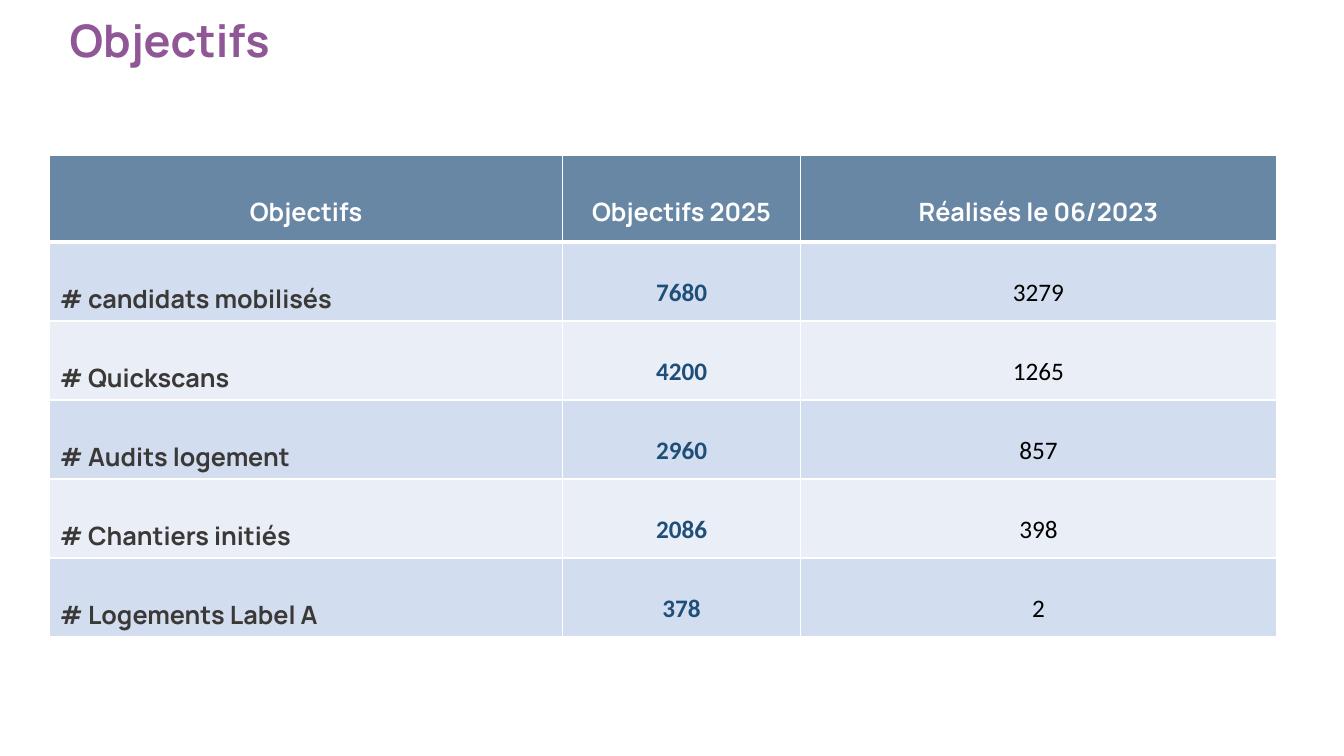
from lxml import etree
from pptx import Presentation
from pptx.dml.color import RGBColor
from pptx.enum.text import MSO_ANCHOR, MSO_AUTO_SIZE, PP_ALIGN
from pptx.oxml.ns import qn
from pptx.util import Pt

LEFT, CENTER = PP_ALIGN.LEFT, PP_ALIGN.CENTER
MIDDLE = MSO_ANCHOR.MIDDLE
NO_AUTOFIT = MSO_AUTO_SIZE.NONE

EMU_PER_PX = 9144  # 100 px to the inch
TITLE_ONLY_LAYOUT = 5

HEADERS = ["Objectifs", "Objectifs 2025", "Réalisés le 06/2023"]
GOALS = [
    ("# candidats mobilisés", 7680, 3279),
    ("# Quickscans", 4200, 1265),
    ("# Audits logement", 2960, 857),
    ("# Chantiers initiés", 2086, 398),
    ("# Logements Label A", 378, 2),
]
COLUMN_WIDTHS = [509, 236, 472]
HEADER_HEIGHT, ROW_HEIGHT = 86, 69


def px(length):
    return length * EMU_PER_PX


def color(hex_string):
    return RGBColor.from_string(hex_string)


class GoalSlide:
    heading_font = "Manrope"
    number_font = "Calibri"
    white = "FFFFFF"
    title_color = "8F5796"
    header_fill = "6787A4"
    band_fills = ["D2DEEF", "EAEFF7"]
    # font, colour, bold and alignment of each body column
    column_styles = [
        (heading_font, "3B3838", True, LEFT),
        (number_font, "1F4E79", True, CENTER),
        (number_font, "000000", False, CENTER),
    ]
    header_style = (heading_font, white, True, CENTER)

    def __init__(self, presentation):
        layout = presentation.slide_layouts[TITLE_ONLY_LAYOUT]
        self.slide = presentation.slides.add_slide(layout)

    def set_text(self, text_frame, text, size, style, line_spacing):
        font_name, text_color, bold, alignment = style
        paragraph = text_frame.paragraphs[0]
        paragraph.text = text
        paragraph.alignment = alignment
        paragraph.line_spacing = line_spacing
        font = paragraph.font
        font.name, font.size, font.bold = font_name, Pt(size), bold
        font.color.rgb = color(text_color)

    def title(self, text, left, top, width, height):
        shape = self.slide.shapes.title
        shape.left, shape.top = px(left), px(top)
        shape.width, shape.height = px(width), px(height)
        frame = shape.text_frame
        frame.vertical_anchor = MIDDLE
        frame.auto_size = NO_AUTOFIT
        style = (self.heading_font, self.title_color, True, LEFT)
        self.set_text(frame, text, 32, style, 0.9)

    def borders(self, cell, top, bottom):
        """Draw white cell borders, 1 pt at the sides."""
        properties = cell._tc.get_or_add_tcPr()
        for side, points in (("L", 1), ("R", 1), ("T", top), ("B", bottom)):
            line = etree.SubElement(properties, qn(f"a:ln{side}"), w=str(Pt(points)))
            fill = etree.SubElement(line, qn("a:solidFill"))
            etree.SubElement(fill, qn("a:srgbClr"), val=self.white)

    def cell(self, cell, text, style, fill, top=1, bottom=1):
        self.borders(cell, top, bottom)
        cell.fill.solid()
        cell.fill.fore_color.rgb = color(fill)
        self.set_text(cell.text_frame, text, 18, style, 2.0)

    def table(self, headers, rows, left, top):
        height = HEADER_HEIGHT + ROW_HEIGHT * len(rows)
        table = self.slide.shapes.add_table(
            len(rows) + 1, len(headers),
            px(left), px(top), px(sum(COLUMN_WIDTHS)), px(height),
        ).table
        table.first_row = table.horz_banding = False
        for column, width in zip(table.columns, COLUMN_WIDTHS):
            column.width = px(width)
        for row in table.rows:
            row.height = px(ROW_HEIGHT)
        table.rows[0].height = px(HEADER_HEIGHT)

        for column, header in enumerate(headers):
            self.cell(table.cell(0, column), header, self.header_style,
                      self.header_fill, bottom=3)
        for index, values in enumerate(rows):
            fill = self.band_fills[index % 2]
            for column, value in enumerate(values):
                self.cell(table.cell(index + 1, column), str(value),
                          self.column_styles[column], fill,
                          top=3 if index == 0 else 1)


def main():
    presentation = Presentation()
    presentation.slide_width, presentation.slide_height = px(1333), px(750)
    slide = GoalSlide(presentation)
    slide.table(HEADERS, GOALS, 49, 154)
    slide.title("Objectifs", 59, -13, 1251, 111)
    presentation.save("out.pptx")


if __name__ == "__main__":
    main()
